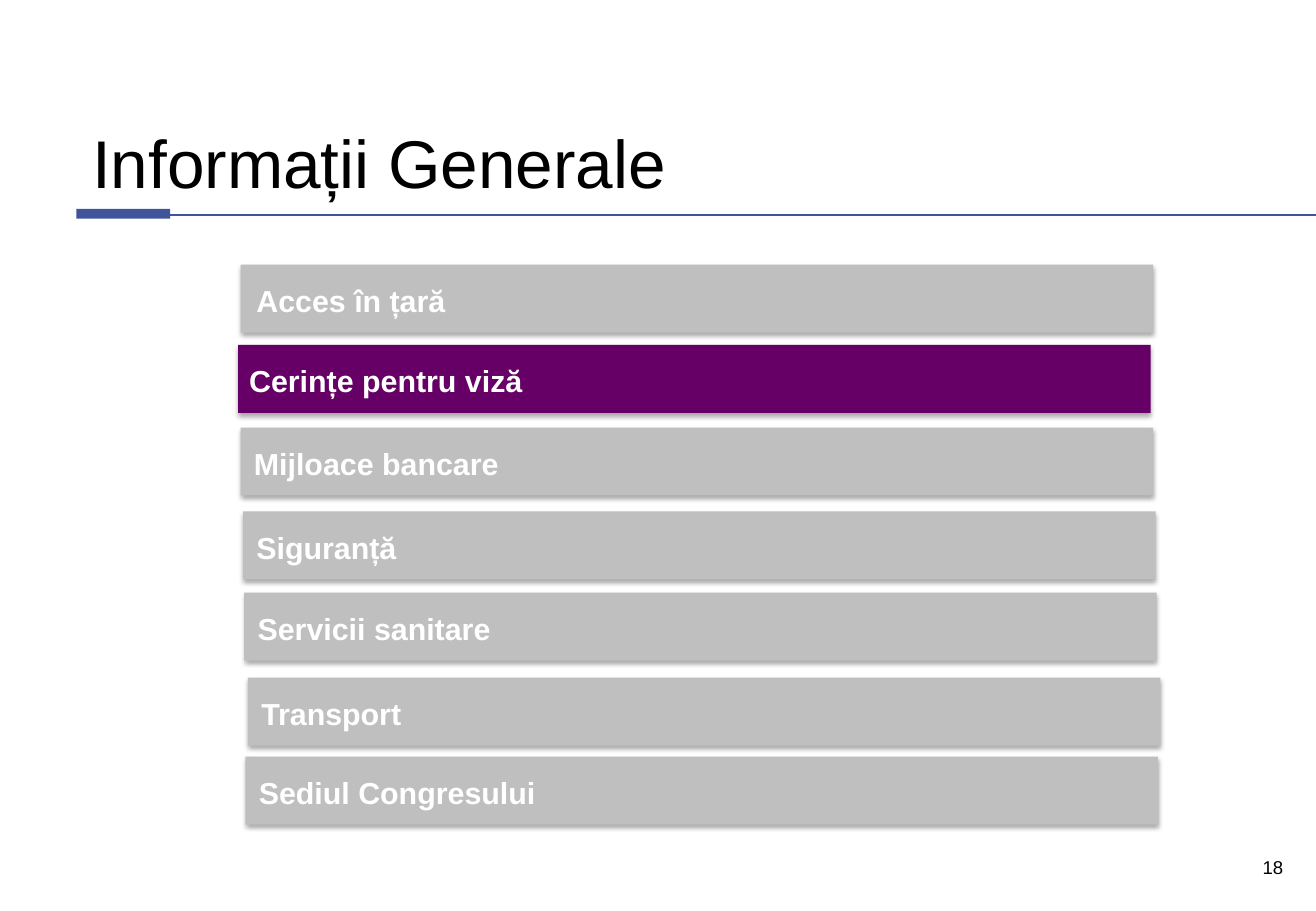
from lxml import etree
from pptx import Presentation
from pptx.dml.color import RGBColor
from pptx.enum import shapes, text
from pptx.oxml import ns
from pptx.util import Inches, Pt

COLORS = {"title": "000000", "rule": "40549B", "bar": "BFBFBF",
          "active": "660066", "label": "FFFFFF", "shadow": "000000"}
BAR_W, BAR_H = 7.51, 0.56
ACTIVE = "Cerințe pentru viză"
# label, left, top, text inset
TOPICS = [
    ("Acces în țară", 1.98, 2.18, 0.13),
    (ACTIVE, 1.96, 2.84, 0.09),
    ("Mijloace bancare", 1.98, 3.52, 0.11),
    ("Siguranță", 2.0, 4.21, 0.11),
    ("Servicii sanitare", 2.01, 4.88, 0.11),
    ("Transport", 2.04, 5.58, 0.11),
    ("Sediul Congresului", 2.02, 6.23, 0.11),
]


def rgb(name):
    return RGBColor.from_string(COLORS[name])


def write(sp, content, size, color, bold=False, align=text.PP_ALIGN.LEFT,
          anchor=text.MSO_ANCHOR.TOP, inset=0.1, pad=0.05, spacing=1.0):
    tf = sp.text_frame
    tf.word_wrap = True
    tf.vertical_anchor = anchor
    tf.margin_left = tf.margin_right = Inches(inset)
    tf.margin_top = tf.margin_bottom = Inches(pad)
    p = tf.paragraphs[0]
    p.alignment = align
    p.line_spacing = spacing
    r = p.add_run()
    r.text = content
    r.font.name = "Arial"
    r.font.size = Pt(size)
    r.font.bold = bold
    r.font.color.rgb = rgb(color)


def add_text(s, box, content, **fmt):
    write(s.shapes.add_textbox(*map(Inches, box)), content, **fmt)


def add_rect(s, box, color):
    sp = s.shapes.add_shape(shapes.MSO_SHAPE.RECTANGLE, *map(Inches, box))
    sp.shadow.inherit = False
    sp.fill.solid()
    sp.fill.fore_color.rgb = rgb(color)
    sp.line.fill.background()
    return sp


def effect_list(sp):
    return sp._element.spPr.get_or_add_effectLst() if hasattr(
        sp._element.spPr, "get_or_add_effectLst") else etree.SubElement(
        sp._element.spPr, ns.qn("a:effectLst"))


def add_soft_shadow(sp):
    effects = sp._element.spPr.find(ns.qn("a:effectLst"))
    shadow = etree.SubElement(
        effects, ns.qn("a:outerShdw"), blurRad=str(Pt(3.1)),
        dist=str(Pt(1.8)), dir="5400000", rotWithShape="0")
    color = etree.SubElement(shadow, ns.qn("a:srgbClr"), val=COLORS["shadow"])
    etree.SubElement(color, ns.qn("a:alpha"), val="35000")


def add_header(s, left, top, right):
    """Title over a thin rule that starts with a thick tab."""
    add_text(s, (left + 0.03, top, 6.08, 0.71), "Informații Generale", size=40,
             color="title", anchor=text.MSO_ANCHOR.BOTTOM, pad=0)
    add_rect(s, (left, top + 0.77, 0.77, 0.08), "rule")
    y = Inches(top + 0.82)
    rule = s.shapes.add_connector(shapes.MSO_CONNECTOR.STRAIGHT,
                                  Inches(left + 0.27), y, Inches(right), y)
    rule.line.color.rgb = rgb("rule")
    rule.line.width = Pt(0.75)
    etree.SubElement(rule._element.spPr, ns.qn("a:effectLst"))


def add_topic(s, label, left, top, inset):
    bar = add_rect(s, (left, top, BAR_W, BAR_H),
                   "active" if label == ACTIVE else "bar")
    add_soft_shadow(bar)
    write(bar, label, size=18, color="label", bold=True, inset=inset,
          anchor=text.MSO_ANCHOR.MIDDLE, spacing=1.1)


def main():
    prs = Presentation()
    prs.slide_width, prs.slide_height = Inches(10.83), Inches(7.5)
    s = prs.slides.add_slide(prs.slide_layouts[6])
    add_header(s, 0.63, 0.95, 10.83)
    for topic in TOPICS:
        add_topic(s, *topic)
    add_text(s, (8.4, 7, 2.26, 0.42), "18", size=11, color="title",
             align=text.PP_ALIGN.RIGHT)
    prs.save("out.pptx")


if __name__ == "__main__":
    main()
